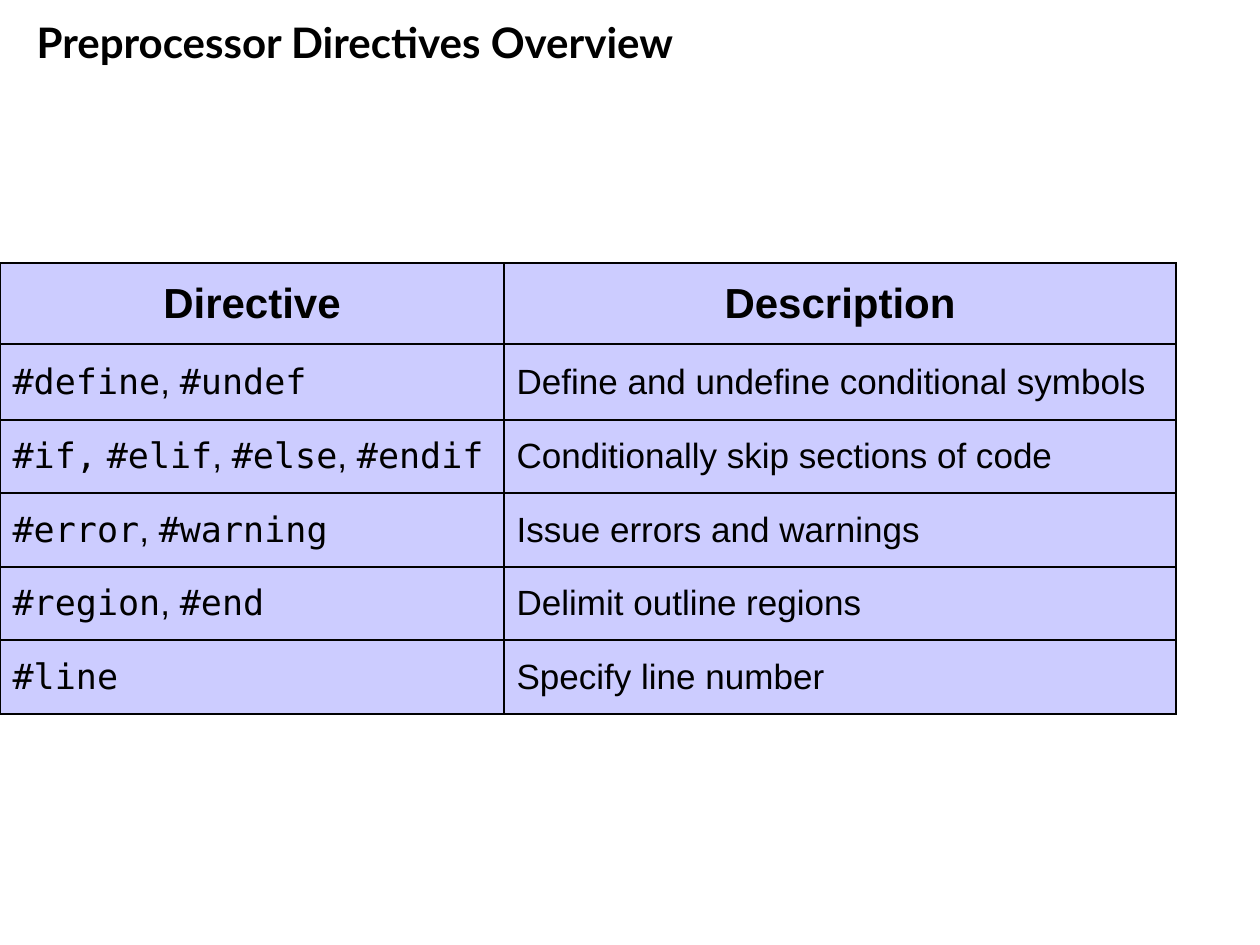
from dataclasses import dataclass

from lxml.etree import SubElement
from pptx import Presentation
from pptx.dml.color import RGBColor
from pptx.enum.text import MSO_ANCHOR, MSO_AUTO_SIZE, PP_ALIGN
from pptx.oxml.ns import qn
from pptx.util import Emu, Pt

BLACK = RGBColor(0x00, 0x00, 0x00)
LAVENDER = RGBColor(0xCC, 0xCC, 0xFF)
SANS = "Arial"
MONO = "DejaVu Sans Mono"
TITLE_FONT = "Lato"
COLUMN_WIDTHS = (504, 672)
ROW_HEIGHTS = (81, 76, 73, 74, 73, 74)


@dataclass(frozen=True)
class Span:
    text: str
    font: str = SANS


@dataclass(frozen=True)
class Entry:
    spans: tuple[Span, ...]
    description: str


COMMA = Span(", ")
ENTRIES = (
    Entry((Span("#define", MONO), COMMA, Span("#undef", MONO)),
          "Define and undefine conditional symbols"),
    Entry((Span("#if,", MONO), Span(" "), Span("#elif", MONO), COMMA,
           Span("#else", MONO), COMMA, Span("#endif", MONO)),
          "Conditionally skip sections of code"),
    Entry((Span("#error", MONO), COMMA, Span("#warning", MONO)),
          "Issue errors and warnings"),
    Entry((Span("#region", MONO), COMMA, Span("#end", MONO)),
          "Delimit outline regions"),
    Entry((Span("#line", MONO),), "Specify line number"),
)


def px(length: int) -> Emu:
    """Turn pixels, 126 to the inch, into EMU."""
    return Emu(round(length * 914400 / 126))


def style_run(run, font: str, size: int, bold: bool) -> None:
    """Give a run its typeface, size, weight and colour."""
    run.font.name = font
    run.font.size = Pt(size)
    run.font.bold = bold
    run.font.color.rgb = BLACK


def draw_borders(cell) -> None:
    """Draw a thin black line on each side of a cell."""
    properties = cell._tc.get_or_add_tcPr()
    for index, side in enumerate(("lnL", "lnR", "lnT", "lnB")):
        line = properties.makeelement(qn(f"a:{side}"), {"w": str(Pt(1))})
        fill = SubElement(line, qn("a:solidFill"))
        SubElement(fill, qn("a:srgbClr"), val=str(BLACK))
        properties.insert(index, line)


def fill_cell(cell, spans: tuple[Span, ...], heading: bool = False) -> None:
    """Write the spans into a cell and format it."""
    cell.fill.solid()
    cell.fill.fore_color.rgb = LAVENDER
    cell.vertical_anchor = MSO_ANCHOR.MIDDLE
    draw_borders(cell)
    para = cell.text_frame.paragraphs[0]
    para.alignment = PP_ALIGN.CENTER if heading else PP_ALIGN.LEFT
    spacing = SubElement(para._p.get_or_add_pPr(), qn("a:spcBef"))
    SubElement(spacing, qn("a:spcPct"), val="20000")
    for span in spans:
        run = para.add_run()
        run.text = span.text
        style_run(run, span.font, 24 if heading else 20, heading)


def add_title(page, text: str) -> None:
    """Place the slide title at the top left."""
    title = page.shapes.title
    title.left, title.top, title.width, title.height = map(px, (24, 10, 1223, 126))
    frame = title.text_frame
    frame.text = text
    frame.word_wrap = True
    frame.auto_size = MSO_AUTO_SIZE.NONE
    frame.vertical_anchor = MSO_ANCHOR.TOP
    para = frame.paragraphs[0]
    para.alignment = PP_ALIGN.LEFT
    style_run(para.runs[0], TITLE_FONT, 24, True)


def add_directive_table(page) -> None:
    """Draw the table of directives and their descriptions."""
    table = page.shapes.add_table(
        len(ROW_HEIGHTS), len(COLUMN_WIDTHS), px(0), px(263),
        px(sum(COLUMN_WIDTHS)), px(sum(ROW_HEIGHTS))).table
    table.horz_banding = False
    for column, width in zip(table.columns, COLUMN_WIDTHS):
        column.width = px(width)
    for row, height in zip(table.rows, ROW_HEIGHTS):
        row.height = px(height)
    for index, heading in enumerate(("Directive", "Description")):
        fill_cell(table.cell(0, index), (Span(heading),), heading=True)
    for index, entry in enumerate(ENTRIES, start=1):
        fill_cell(table.cell(index, 0), entry.spans)
        fill_cell(table.cell(index, 1), (Span(entry.description),))


def main() -> None:
    """Build the slide and save it."""
    deck = Presentation()
    deck.slide_width, deck.slide_height = px(1260), px(945)
    page = deck.slides.add_slide(deck.slide_layouts[5])
    add_title(page, "Preprocessor Directives Overview")
    add_directive_table(page)
    deck.save("out.pptx")


if __name__ == "__main__":
    main()
